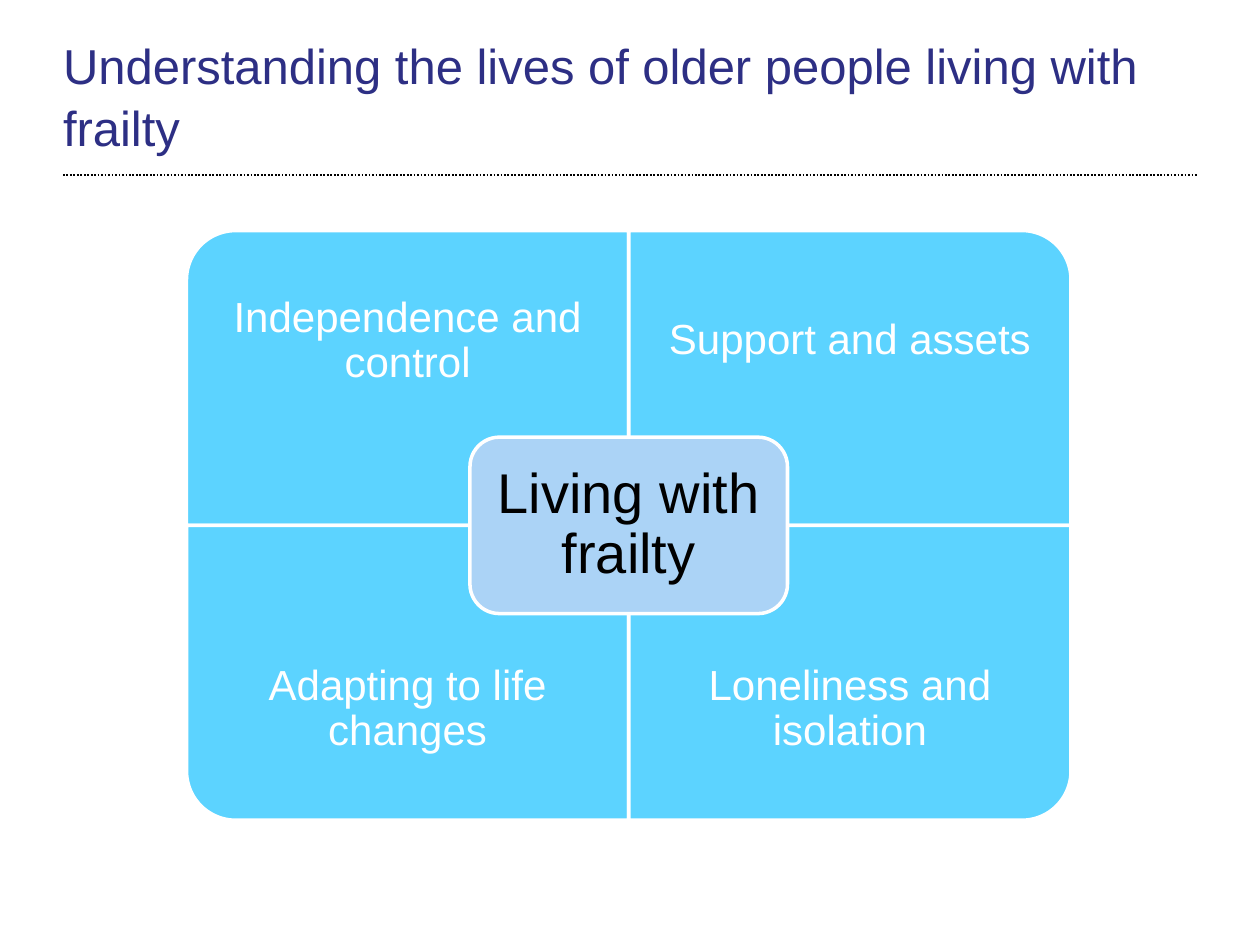
from dataclasses import dataclass

from lxml import etree
from pptx import Presentation
from pptx.dml.color import RGBColor
from pptx.enum.dml import MSO_LINE
from pptx.enum.shapes import MSO_CONNECTOR, MSO_SHAPE
from pptx.enum.text import MSO_ANCHOR, PP_ALIGN
from pptx.oxml.ns import qn
from pptx.util import Inches, Pt

ROUND_ONE = MSO_SHAPE.ROUND_1_RECTANGLE
ROUNDED = MSO_SHAPE.ROUNDED_RECTANGLE
LEFT, CENTER = PP_ALIGN.LEFT, PP_ALIGN.CENTER
MIDDLE, BOTTOM = MSO_ANCHOR.MIDDLE, MSO_ANCHOR.BOTTOM

# Content
TITLE = "Understanding the lives of older people living with frailty"
CENTRE = "Living with frailty"
# (label, column, row, rotation that turns the round corner outwards)
QUADRANTS = [
    ("Independence and control", 0, 0, 270),
    ("Support and assets", 1, 0, 0),
    ("Adapting to life changes", 0, 1, 180),
    ("Loneliness and isolation", 1, 1, 90),
]


@dataclass(frozen=True)
class Theme:
    font: str = "Arial"
    title: str = "2D2F84"
    quadrant: str = "5CD3FF"
    centre: str = "ABD3F6"
    white: str = "FFFFFF"
    black: str = "000000"
    title_size: int = 28
    label_size: int = 24
    centre_size: int = 32
    outline: int = 2


THEME = Theme()

# Grid, in inches
WIDTH, HEIGHT = 10, 7.5
MARGIN = 0.5
RULE_TOP = 1.39
GRID_LEFT, GRID_TOP = 1.48, 1.83
CELL_WIDTH, CELL_HEIGHT = 3.51, 2.34
LABEL_HEIGHT = CELL_HEIGHT * 0.75
CENTRE_WIDTH, CENTRE_HEIGHT = 2.52, 1.4


def box(left, top, width, height):
    return [Inches(value) for value in (left, top, width, height)]


def write(shape, text, *, size, color, align=CENTER, anchor=MIDDLE,
          inset=0.0, spacing=0.9):
    frame = shape.text_frame
    frame.word_wrap = True
    frame.vertical_anchor = anchor
    frame.margin_left = frame.margin_right = Inches(inset)
    frame.margin_top = frame.margin_bottom = Inches(inset)
    paragraph = frame.paragraphs[0]
    paragraph.alignment = align
    paragraph.line_spacing = spacing
    run = paragraph.add_run()
    run.text = text
    run.font.name = THEME.font
    run.font.size = Pt(size)
    run.font.color.rgb = RGBColor.from_string(color)


def add_panel(slide, kind, area, fill):
    shape = slide.shapes.add_shape(kind, *area)
    shape.shadow.inherit = False
    shape.fill.solid()
    shape.fill.fore_color.rgb = RGBColor.from_string(fill)
    shape.line.color.rgb = RGBColor.from_string(THEME.white)
    shape.line.width = Pt(THEME.outline)
    return shape


def add_quadrant(slide, label, column, row, rotation):
    left = GRID_LEFT + column * CELL_WIDTH
    top = GRID_TOP + row * CELL_HEIGHT
    # A quarter turn swaps the sides around the cell's centre
    width, height = CELL_WIDTH, CELL_HEIGHT
    if rotation % 180:
        width, height = height, width
    area = box(left + (CELL_WIDTH - width) / 2,
               top + (CELL_HEIGHT - height) / 2, width, height)
    add_panel(slide, ROUND_ONE, area, THEME.quadrant).rotation = rotation

    # The label fills the outer three quarters of the cell
    label_top = top + row * (CELL_HEIGHT - LABEL_HEIGHT)
    text_box = slide.shapes.add_textbox(
        *box(left, label_top, CELL_WIDTH, LABEL_HEIGHT))
    write(text_box, label, size=THEME.label_size, color=THEME.white, inset=0.19)


def main():
    presentation = Presentation()
    presentation.slide_width = Inches(WIDTH)
    presentation.slide_height = Inches(HEIGHT)
    slide = presentation.slides.add_slide(presentation.slide_layouts[5])

    # Title and dotted rule
    title = slide.shapes.title
    title.left, title.top, title.width, title.height = box(
        MARGIN, 0.27, WIDTH - 2 * MARGIN, 0.97)
    write(title, TITLE, size=THEME.title_size, color=THEME.title,
          align=LEFT, anchor=BOTTOM, spacing=1.05)
    rule = slide.shapes.add_connector(
        MSO_CONNECTOR.STRAIGHT, Inches(MARGIN), Inches(RULE_TOP),
        Inches(WIDTH - MARGIN), Inches(RULE_TOP))
    rule.line.color.rgb = RGBColor.from_string(THEME.black)
    rule.line.width = Pt(1)
    rule.line.dash_style = MSO_LINE.ROUND_DOT
    etree.SubElement(rule._element.spPr, qn("a:effectLst"))

    # Matrix
    for quadrant in QUADRANTS:
        add_quadrant(slide, *quadrant)

    # Centre panel over the crossing
    area = box(GRID_LEFT + CELL_WIDTH - CENTRE_WIDTH / 2,
               GRID_TOP + CELL_HEIGHT - CENTRE_HEIGHT / 2,
               CENTRE_WIDTH, CENTRE_HEIGHT)
    centre = add_panel(slide, ROUNDED, area, THEME.centre)
    write(centre, CENTRE, size=THEME.centre_size, color=THEME.black, inset=0.13)

    presentation.save("out.pptx")


if __name__ == "__main__":
    main()
